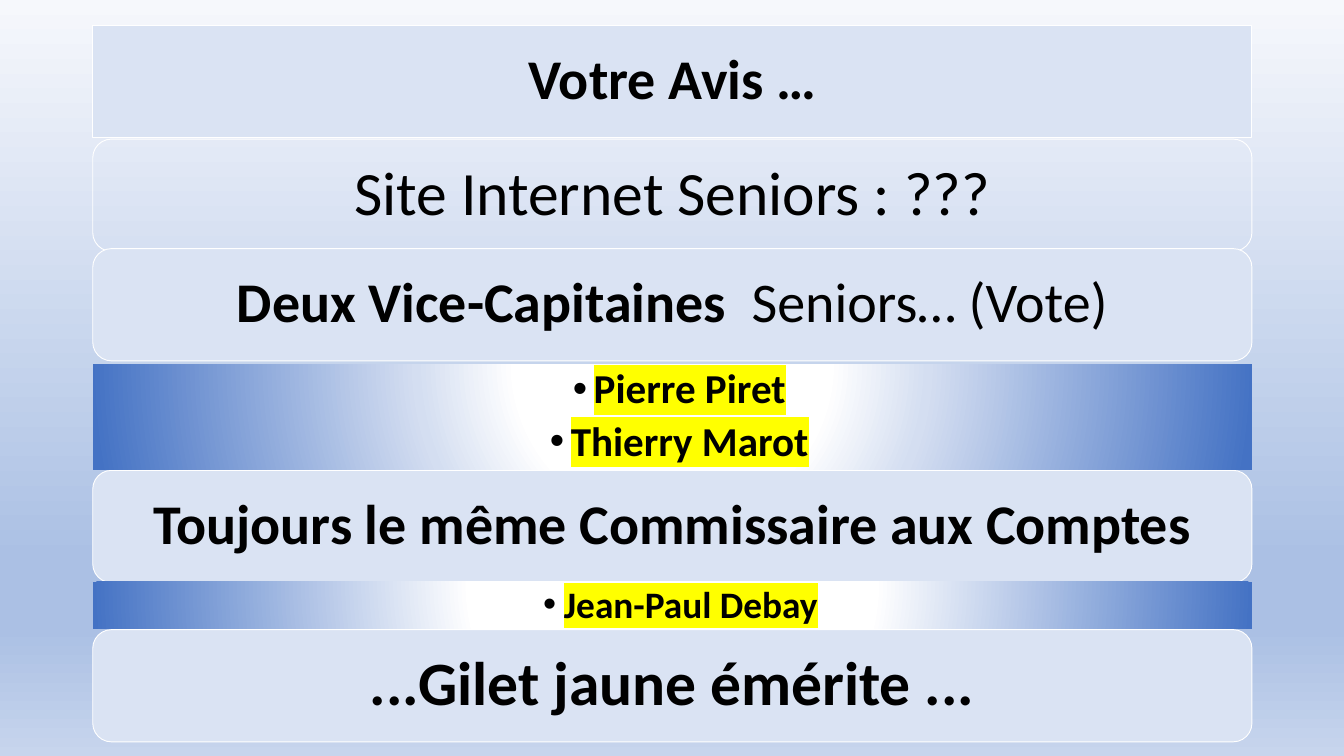
"""Build the slide asking members for their view on the seniors section."""
from lxml import etree
from pptx import Presentation
from pptx.dml.color import RGBColor
from pptx.enum.shapes import MSO_SHAPE
from pptx.enum.text import MSO_ANCHOR, MSO_AUTO_SIZE, PP_ALIGN
from pptx.oxml import parse_xml
from pptx.oxml.ns import nsdecls, qn
from pptx.util import Inches, Pt

ROUND, RECT = MSO_SHAPE.ROUNDED_RECTANGLE, MSO_SHAPE.RECTANGLE
MIDDLE, TOP = MSO_ANCHOR.MIDDLE, MSO_ANCHOR.TOP
CENTER, FIXED = PP_ALIGN.CENTER, MSO_AUTO_SIZE.NONE
INK = {"card": "DAE3F3", "white": "FFFFFF", "text": "000000", "mark": "FFFF00",
       "pale": "F6F8FC", "mid": "ABC0E4", "low": "C7D5ED",
       "tint": "D4DEF1", "blue": "4472C4"}
LEFT, WIDTH, HIGH = 1.38, 17.25, 1.67
DOWN = '<a:lin {} ang="5400000" scaled="0"/>'
GLOW = ('<a:path {} path="circle"><a:fillToRect l="50000" t="-80000" '
        'r="50000" b="180000"/></a:path>')


def blend(root, stops, way):
    """Replace the stops and direction of the gradient under root."""
    grad = root.find(".//" + qn("a:gradFill"))
    grad.clear()
    grad.set("rotWithShape", "1")
    row = etree.SubElement(grad, qn("a:gsLst"))
    for pos, name in stops:
        stop = etree.SubElement(row, qn("a:gs"), pos=str(pos * 1000))
        etree.SubElement(stop, qn("a:srgbClr"), val=INK[name])
    grad.append(parse_xml(way.format(nsdecls("a"))))


def write(para, text, size, bold):
    """Add one formatted run to a paragraph and return it."""
    run = para.add_run()
    run.text = text
    run.font.size, run.font.bold = Pt(size), bold
    run.font.color.rgb = RGBColor.from_string(INK["text"])
    run.font.name = "Calibri"
    return run


deck = Presentation()
deck.slide_width, deck.slide_height = Inches(20), Inches(11.25)
slide = deck.slides.add_slide(deck.slide_layouts[5])
slide.background.fill.gradient()
blend(slide.element, [(0, "pale"), (74, "mid"), (83, "mid"), (100, "low")], DOWN)

cards = [
    (0.38, 60, "card", [("Votre Avis …", True)]),
    (2.07, 66, None, [("Site Internet Seniors : ???", False)]),
    (3.7, 60, "card", [("Deux Vice-Capitaines  ", True), ("Seniors… (Vote)", False)]),
    (7, 60, "card", [("Toujours le même Commissaire aux Comptes", True)]),
    (9.37, 66, "card", [("...Gilet jaune émérite ...", True)]),
]
for top, size, fill, runs in cards:
    box = Inches(LEFT), Inches(top), Inches(WIDTH), Inches(HIGH)
    if top == cards[0][0]:
        card = slide.shapes.title
        card.left, card.top, card.width, card.height = box
        card.element.spPr.insert(1, parse_xml(
            f'<a:prstGeom {nsdecls("a")} prst="roundRect"><a:avLst/></a:prstGeom>'))
    else:
        card = slide.shapes.add_shape(ROUND, *box)
    card.shadow.inherit = False
    if fill:
        card.fill.solid()
        card.fill.fore_color.rgb = RGBColor.from_string(INK[fill])
    else:
        card.fill.background()
    card.line.color.rgb = RGBColor.from_string(INK["white"])
    card.line.width = Pt(1)
    frame = card.text_frame
    frame.auto_size, frame.word_wrap = FIXED, True
    frame.vertical_anchor = MIDDLE
    frame.margin_left = frame.margin_right = Inches(0.33)
    frame.margin_top = frame.margin_bottom = Inches(0.33)
    para = frame.paragraphs[0]
    para.alignment, para.line_spacing = CENTER, 0.9
    for text, bold in runs:
        write(para, text, size, bold)

bands = [
    (5.42, 1.57, 44, 0.34, ["Pierre Piret", "Thierry Marot"],
     [(0, "white"), (27, "white"), (44, "tint"), (100, "blue")]),
    (8.66, 0.7, 40, 0.31, ["Jean-Paul Debay"],
     [(0, "white"), (35, "white"), (100, "blue")]),
]
for top, high, size, right, names, stops in bands:
    band = slide.shapes.add_shape(
        RECT, Inches(LEFT), Inches(top), Inches(WIDTH), Inches(high))
    band.shadow.inherit = False
    band.fill.gradient()
    blend(band.element, stops, GLOW)
    band.line.fill.background()
    frame = band.text_frame
    frame.word_wrap, frame.vertical_anchor = True, TOP
    frame.margin_left, frame.margin_right = Inches(0.55), Inches(right)
    frame.margin_top = frame.margin_bottom = Inches(0.06)
    for spot, name in enumerate(names):
        para = frame.add_paragraph() if spot else frame.paragraphs[0]
        para.alignment, para.level = CENTER, 1
        para.line_spacing, para.space_after = 0.9, Pt(size * 0.2)
        props = para._p.get_or_add_pPr()
        props.set("marL", str(Inches(0.31)))
        props.set("indent", str(Inches(-0.31)))
        etree.SubElement(props, qn("a:buFont"), typeface="Arial")
        etree.SubElement(props, qn("a:buChar"), char="•")
        run = write(para, name, size, True)
        mark = parse_xml(f'<a:highlight {nsdecls("a")}>'
                         f'<a:srgbClr val="{INK["mark"]}"/></a:highlight>')
        run._r.rPr.find(qn("a:solidFill")).addnext(mark)

deck.save("out.pptx")
